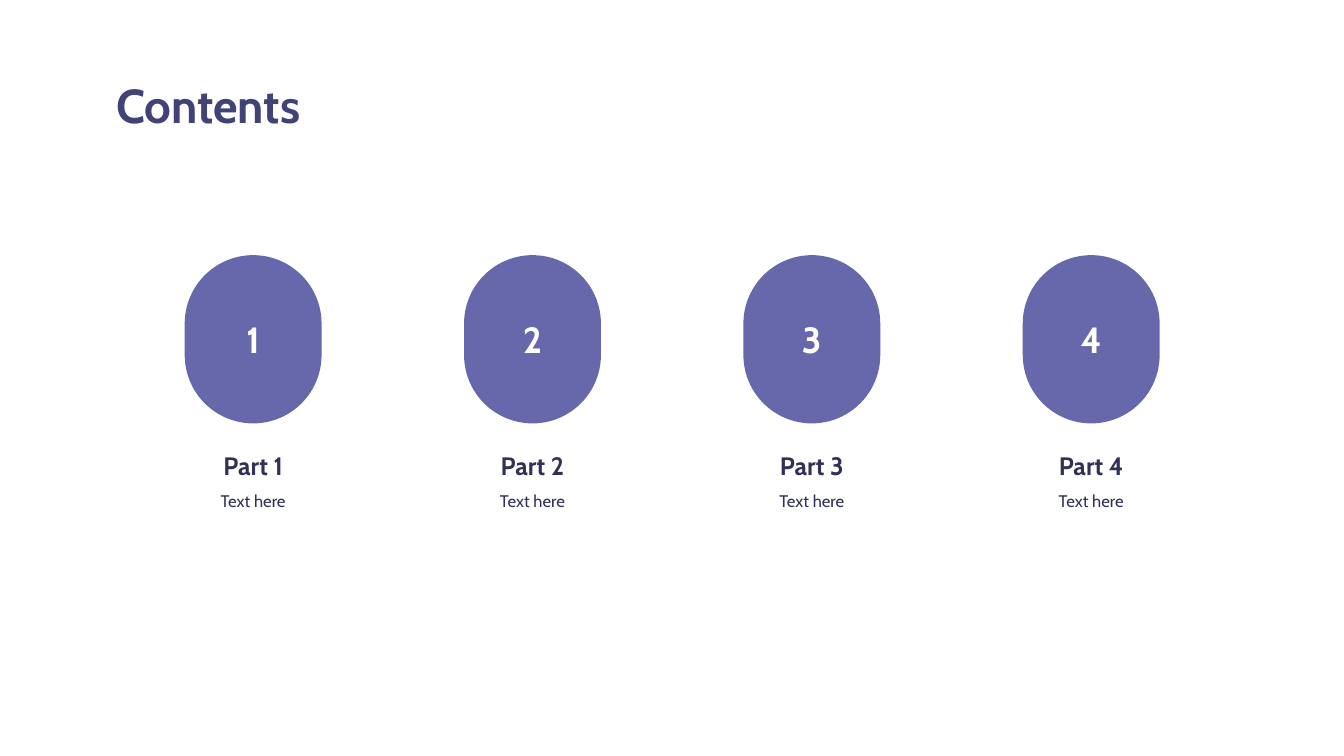
from pptx import Presentation
from pptx.dml.color import RGBColor
from pptx.enum.shapes import MSO_SHAPE
from pptx.enum.text import MSO_ANCHOR, MSO_AUTO_SIZE, PP_ALIGN
from pptx.util import Cm, Pt

ROUNDED = MSO_SHAPE.ROUNDED_RECTANGLE
TOP, MIDDLE = MSO_ANCHOR.TOP, MSO_ANCHOR.MIDDLE
LEFT, CENTER = PP_ALIGN.LEFT, PP_ALIGN.CENTER
FIT_SHAPE = MSO_AUTO_SIZE.SHAPE_TO_FIT_TEXT

# Content
TITLE = "Contents"
PARTS = [
    ("1", "Part 1", "Text here"),
    ("2", "Part 2", "Text here"),
    ("3", "Part 3", "Text here"),
    ("4", "Part 4", "Text here"),
]

# Style
FONT = "Cabin"
TITLE_COLOR, PILL_COLOR, TEXT_COLOR, WHITE = "414275", "6768AB", "313158", "FFFFFF"

# Layout in centimetres
FIRST_CENTER, PITCH = 6.38, 7.04
PILL_TOP, PILL_WIDTH, PILL_HEIGHT = 6.43, 3.45, 4.24
HEADING_TOP, HEADING_HEIGHT = 11.23, 1.02
DETAIL_TOP, DETAIL_WIDTH, DETAIL_HEIGHT = 12.24, 4.27, 0.76


def rgb(color):
    return RGBColor.from_string(color)


def write(shape, text, size, color, bold=True, align=CENTER, anchor=TOP):
    frame = shape.text_frame
    frame.text = text
    frame.word_wrap = True
    frame.vertical_anchor = anchor
    para = frame.paragraphs[0]
    para.alignment = align
    para.font.name = FONT
    para.font.size = Pt(size)
    para.font.bold = bold
    para.font.color.rgb = rgb(color)


def centered(center, top, width, height):
    return Cm(center - width / 2), Cm(top), Cm(width), Cm(height)


def add_label(page, area, text, size, bold):
    box = page.shapes.add_textbox(*area)
    write(box, text, size, TEXT_COLOR, bold)
    box.text_frame.auto_size = FIT_SHAPE


def add_pill(page, area, number):
    pill = page.shapes.add_shape(ROUNDED, *area)
    pill.adjustments[0] = 0.5
    pill.shadow.inherit = False
    pill.fill.solid()
    pill.fill.fore_color.rgb = rgb(PILL_COLOR)
    pill.line.fill.background()
    write(pill, number, 26, WHITE, anchor=MIDDLE)


def main():
    deck = Presentation()
    deck.slide_width, deck.slide_height = Cm(33.87), Cm(19.05)
    page = deck.slides.add_slide(deck.slide_layouts[5])

    # Title
    title = page.shapes.title
    title.left, title.top, title.width, title.height = Cm(2.67), Cm(1.78), Cm(5.99), Cm(1.7)
    write(title, TITLE, 34, TITLE_COLOR, align=LEFT)
    title.text_frame.word_wrap = False
    title.text_frame.auto_size = FIT_SHAPE

    # One column for each part
    for index, (number, heading, detail) in enumerate(PARTS):
        center = FIRST_CENTER + index * PITCH
        add_pill(page, centered(center, PILL_TOP, PILL_WIDTH, PILL_HEIGHT), number)
        add_label(page, centered(center, HEADING_TOP, PILL_WIDTH, HEADING_HEIGHT), heading, 18, True)
        add_label(page, centered(center, DETAIL_TOP, DETAIL_WIDTH, DETAIL_HEIGHT), detail, 12, False)

    deck.save("out.pptx")


if __name__ == "__main__":
    main()
